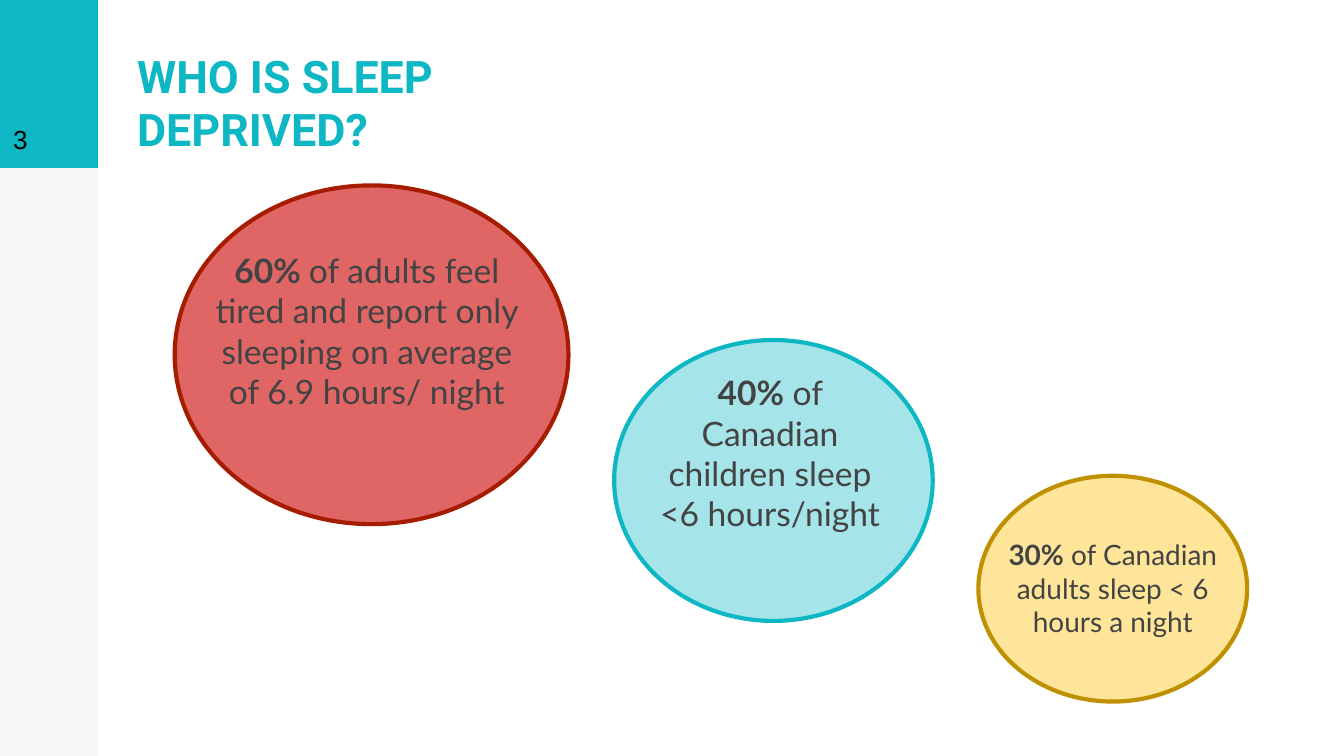
from lxml.etree import SubElement as Sub
from pptx import Presentation
from pptx.dml.color import RGBColor as RGB
from pptx.enum.shapes import MSO_SHAPE as Shape
from pptx.enum.text import MSO_ANCHOR as Anchor, MSO_AUTO_SIZE as Auto, PP_ALIGN as Align
from pptx.oxml.ns import qn
from pptx.util import Inches, Pt

WIDE = 10
HIGH = WIDE * 9 / 16

TEAL = RGB(0x0D, 0xB7, 0xC4)
BLACK = RGB(0, 0, 0)
GREY = RGB(0x43, 0x43, 0x43)
RED = RGB(0xE0, 0x66, 0x66)
MAROON = RGB(0xA6, 0x1C, 0x00)
CREAM = RGB(0xFF, 0xE5, 0x99)
GOLD = RGB(0xBF, 0x90, 0x00)

# Bubble box, fill, opacity, line, text box, bold figure, remark, size
FACTS = [
    ((1.3, 1.38, 2.93, 2.52), RED, 100, MAROON, (1.5, 1.76, 2.46, 1.86),
     "60% ", "of adults feel tired and report only sleeping on average of 6.9 hours/ night", 18),
    ((4.57, 2.53, 2.37, 2.09), TEAL, 37, TEAL, (4.78, 2.67, 1.9, 1.4),
     "40%", " of Canadian children sleep <6 hours/night", 18),
    ((7.28, 3.54, 2, 1.68), CREAM, 100, GOLD, (7.24, 3.9, 2.08, 0.97),
     "30%", " of Canadian adults sleep < 6 hours a night", 15),
]


def place(shape, box):
    shape.left, shape.top, shape.width, shape.height = map(Inches, box)


def write(shape, *parts, font, size, color, align=Align.LEFT, anchor=Anchor.TOP, before=0):
    """Fill a shape with one paragraph of (text, bold) parts."""
    frame = shape.text_frame
    frame.word_wrap = True
    frame.auto_size = Auto.NONE
    frame.vertical_anchor = anchor
    frame.margin_left = frame.margin_right = Inches(0.1)
    frame.margin_top = frame.margin_bottom = Inches(0.1)
    para = frame.paragraphs[0]
    para.alignment = align
    para.space_before = Pt(before)
    for text, bold in parts:
        run = para.add_run()
        run.text = text
        run.font.name = font
        run.font.size = Pt(size)
        run.font.bold = bold
        run.font.color.rgb = color


def label(slide, box, *parts, **style):
    write(slide.shapes.add_textbox(*map(Inches, box)), *parts, **style)


def block(slide, kind, box, fill, alpha=100, line=None):
    """Draw a filled shape; alpha is its opacity in percent."""
    shape = slide.shapes.add_shape(kind, *map(Inches, box))
    shape.shadow.inherit = False
    shape.fill.solid()
    shape.fill.fore_color.rgb = fill
    if alpha < 100:
        tint = shape.fill._xPr.find(qn("a:solidFill"))[0]
        Sub(tint, qn("a:alpha"), val=str(alpha * 1000))
    if line is None:
        shape.line.fill.background()
    else:
        shape.line.color.rgb = line
        shape.line.width = Pt(2.25)


def main():
    deck = Presentation()
    deck.slide_width, deck.slide_height = Inches(WIDE), Inches(HIGH)
    slide = deck.slides.add_slide(deck.slide_layouts[5])

    # Side band with the page number
    corner = (0, 0, 0.73, 1.25)
    block(slide, Shape.RECTANGLE, (0, 0, 0.73, HIGH), BLACK, alpha=3)
    block(slide, Shape.RECTANGLE, corner, TEAL)
    label(slide, corner, ("3", False), font="Arial", size=14, color=BLACK,
          anchor=Anchor.BOTTOM)

    # Title
    title = slide.shapes.title
    place(title, (0.92, 0.01, 3.89, 1.25))
    write(title, ("WHO IS SLEEP DEPRIVED?", True), font="Roboto", size=24,
          color=TEAL, anchor=Anchor.BOTTOM)

    # Bubbles and their facts
    for oval, fill, alpha, line, box, figure, remark, size in FACTS:
        block(slide, Shape.OVAL, oval, fill, alpha, line)
        label(slide, box, (figure, True), (remark, False), font="Lato", size=size,
              color=GREY, align=Align.CENTER, before=6)

    deck.save("out.pptx")


if __name__ == "__main__":
    main()
